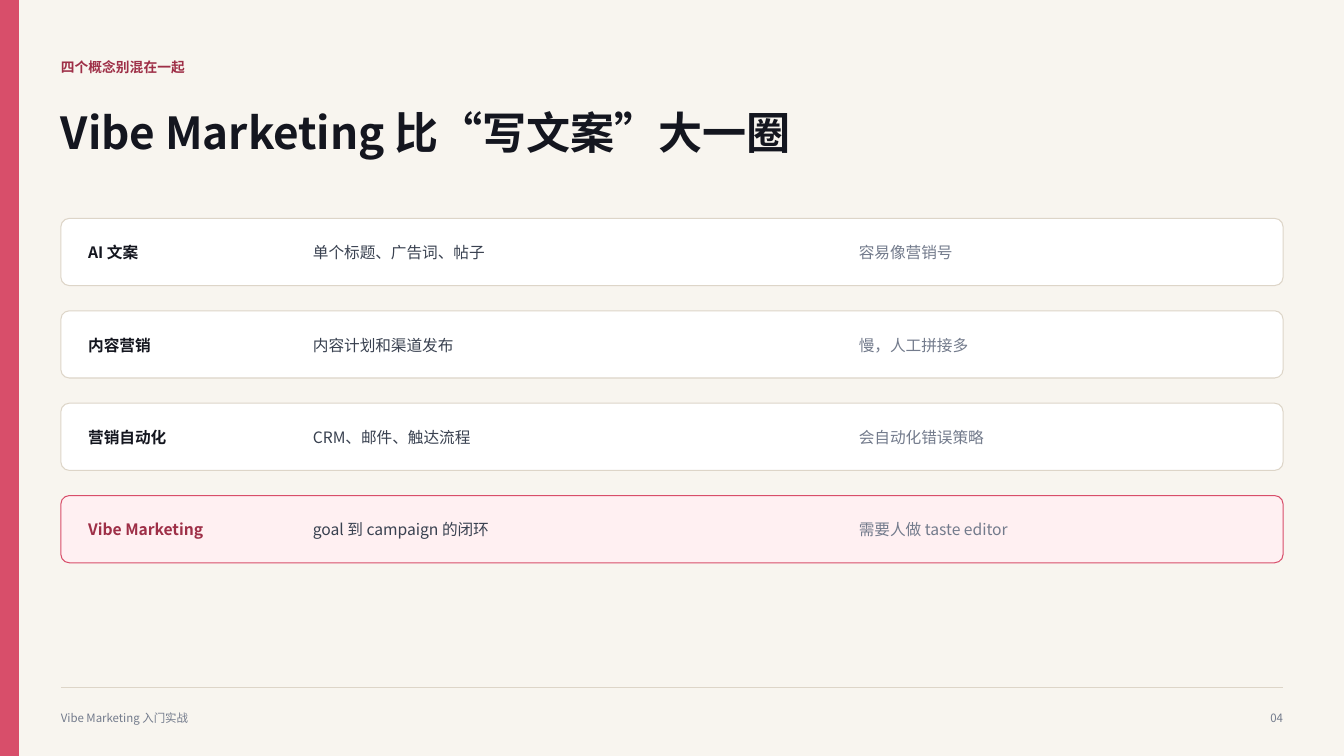
from lxml.etree import SubElement
from pptx import Presentation
from pptx.dml.color import RGBColor
from pptx.enum.shapes import MSO_CONNECTOR, MSO_SHAPE
from pptx.enum.text import PP_ALIGN
from pptx.oxml.ns import qn
from pptx.util import Pt

INK, BODY, MUTED = "14161F", "394150", "737B8C"
ROSE, WINE, BLUSH = "D84E6A", "9E2F47", "FFF0F2"
PAPER, WHITE, RULE = "F8F5EF", "FFFFFF", "DDD5C8"


def color(value):
    return RGBColor.from_string(value)


class Painter:
    """Holds the style and the page being drawn."""
    typeface = "Noto Sans CJK SC"
    line_width = 0.75

    def __init__(self, page):
        self.page = page

    def background(self, fill):
        self.page.background.fill.solid()
        self.page.background.fill.fore_color.rgb = color(fill)

    def outline(self, line, stroke):
        line.color.rgb = color(stroke)
        line.width = Pt(self.line_width)

    def panel(self, left, top, width, height, fill, stroke, corner=None):
        kind = MSO_SHAPE.RECTANGLE if corner is None else MSO_SHAPE.ROUNDED_RECTANGLE
        box = self.page.shapes.add_shape(kind, Pt(left), Pt(top), Pt(width), Pt(height))
        if corner is not None:
            box.adjustments[0] = corner / min(width, height)
        box.shadow.inherit = False
        box.fill.solid()
        box.fill.fore_color.rgb = color(fill)
        self.outline(box.line, stroke)

    def rule(self, left, right, top, stroke):
        rule = self.page.shapes.add_connector(
            MSO_CONNECTOR.STRAIGHT, Pt(left), Pt(top), Pt(right), Pt(top))
        self.outline(rule.line, stroke)
        SubElement(rule._element.spPr, qn("a:effectLst"))

    def text(self, words, left, top, width, height, size, ink,
             bold=False, align=PP_ALIGN.LEFT, spacing=1.12):
        box = self.page.shapes.add_textbox(Pt(left), Pt(top), Pt(width), Pt(height))
        frame_format = {"word_wrap": True, "margin_left": 0, "margin_right": 0,
                        "margin_top": 0, "margin_bottom": 0}
        for name, value in frame_format.items():
            setattr(box.text_frame, name, value)
        para = box.text_frame.paragraphs[0]
        para.alignment = align
        para.line_spacing = spacing
        span = para.add_run()
        span.text = words
        span.font.color.rgb = color(ink)
        font_format = {"name": self.typeface, "size": Pt(size), "bold": bold}
        for name, value in font_format.items():
            setattr(span.font, name, value)
        # East Asian characters take their typeface from a separate element
        SubElement(span.font._element, qn("a:ea"), typeface=self.typeface)


def main():
    deck = Presentation()
    deck.slide_width, deck.slide_height = Pt(960), Pt(540)
    painter = Painter(deck.slides.add_slide(deck.slide_layouts[6]))
    left, right = 43.5, 916.5

    # Background and side band
    painter.background(PAPER)
    painter.panel(0, 0, 13.5, 540, ROSE, ROSE)

    # Footer
    painter.rule(left, right, 491.25, RULE)
    painter.text("Vibe Marketing 入门实战", left, 507, 390, 18, 8.2, MUTED)
    painter.text("04", right - 36, 507, 36, 18, 8.2, MUTED, align=PP_ALIGN.RIGHT)

    # Heading
    painter.text("四个概念别混在一起", left, 40.5, 645, 18, 9.8, WINE, bold=True)
    painter.text("Vibe Marketing 比“写文案”大一圈", left, 78, 637, 42, 31.5, INK,
                 bold=True, spacing=0.96)

    # Comparison rows: concept, scope, weakness
    concepts = [
        ("AI 文案", "单个标题、广告词、帖子", "容易像营销号"),
        ("内容营销", "内容计划和渠道发布", "慢，人工拼接多"),
        ("营销自动化", "CRM、邮件、触达流程", "会自动化错误策略"),
        ("Vibe Marketing", "goal 到 campaign 的闭环", "需要人做 taste editor"),
    ]
    columns = [(63, 127.5), (223.5, 322.5), (613.5, 247.5)]
    for index, cells in enumerate(concepts):
        top = 156 + 66 * index
        highlighted = index == len(concepts) - 1
        fill, stroke = (BLUSH, ROSE) if highlighted else (WHITE, RULE)
        painter.panel(left, top, right - left, 48, fill, stroke, corner=6)
        inks = (WINE if highlighted else INK, BODY, MUTED)
        for column, (words, ink, (cell_left, width)) in enumerate(zip(cells, inks, columns)):
            painter.text(words, cell_left, top + 16, width, 15, 11.2, ink, bold=column == 0)

    deck.save("out.pptx")


if __name__ == "__main__":
    main()
